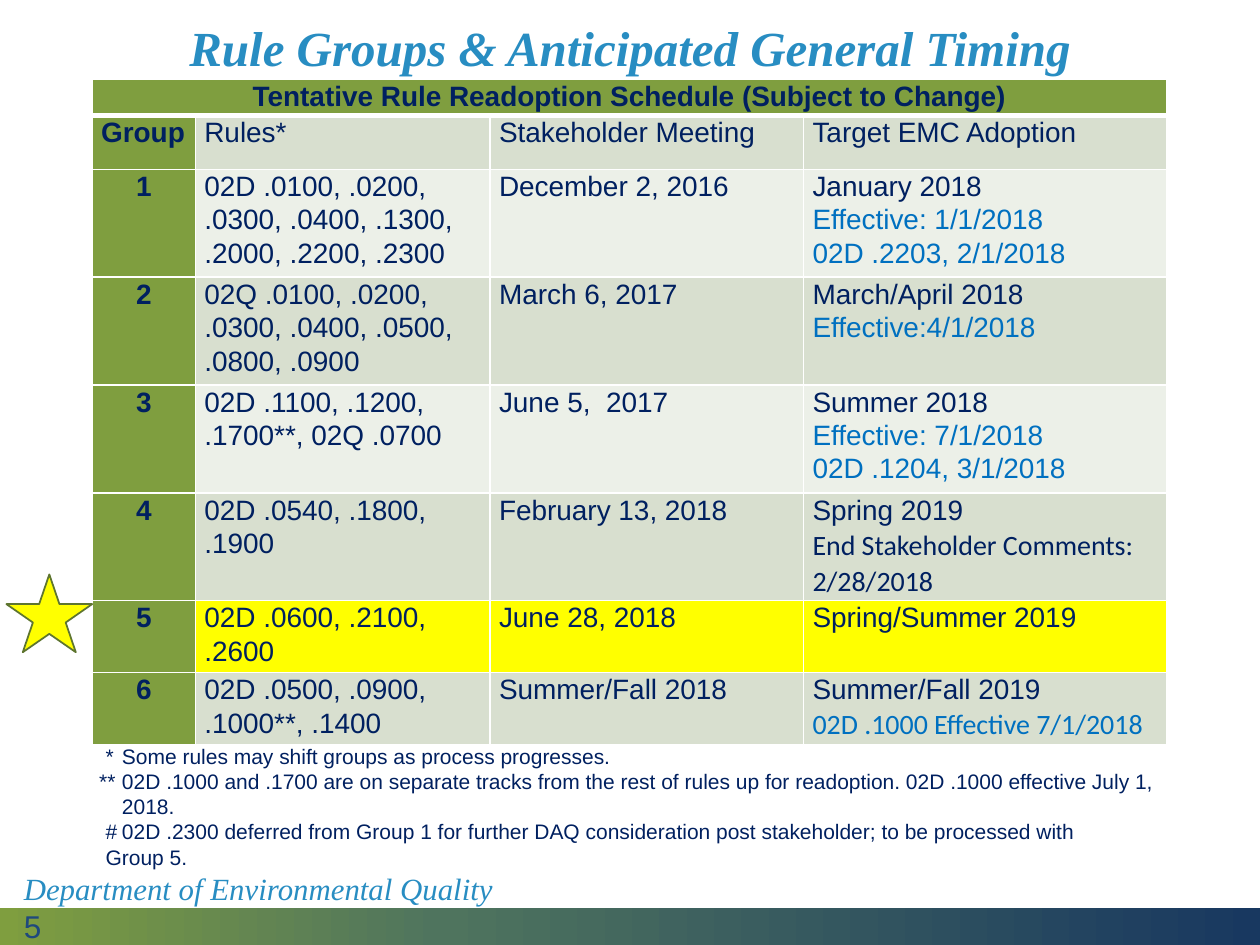
from lxml.etree import SubElement
from pptx import Presentation
from pptx.dml.color import RGBColor
from pptx.enum.shapes import MSO_SHAPE
from pptx.enum.text import MSO_ANCHOR, PP_ALIGN
from pptx.oxml.ns import qn
from pptx.util import Cm, Pt

NAVY, BLUE, TITLE_BLUE = "002060", "0070C0", "288DC2"
GREEN, SAGE, PALE, YELLOW = "7F9E3F", "D8DFCF", "ECF0E8", "FFFF00"
SERIF = "Times New Roman"

COLUMNS = [2.08, 5.94, 6.32, 7.32]
HEIGHTS = [0.72, 1.09, 2.16, 2.16, 2, 2.14, 1.45, 1.45]
HEADINGS = ["Group", "Rules*", "Stakeholder Meeting", "Target EMC Adoption"]
GROUPS = [
    (PALE, "02D .0100, .0200, .0300, .0400, .1300, .2000, .2200, .2300",
     "December 2, 2016",
     [("January 2018",), ("Effective: 1/1/2018", BLUE),
      ("02D .2203, 2/1/2018", BLUE)]),
    (SAGE, "02Q .0100, .0200, .0300, .0400, .0500, .0800, .0900",
     "March 6, 2017",
     [("March/April 2018",), ("Effective:4/1/2018", BLUE)]),
    (PALE, "02D .1100, .1200, .1700**, 02Q .0700", "June 5,  2017",
     [("Summer 2018",), ("Effective: 7/1/2018", BLUE),
      ("02D .1204, 3/1/2018", BLUE)]),
    (SAGE, "02D .0540, .1800, .1900", "February 13, 2018",
     [("Spring 2019",),
      ("End Stakeholder Comments: 2/28/2018", NAVY, "Calibri")]),
    (YELLOW, "02D .0600, .2100, .2600", "June 28, 2018",
     [("Spring/Summer 2019",)]),
    (SAGE, "02D .0500, .0900, .1000**, .1400", "Summer/Fall 2018",
     [("Summer/Fall 2019",),
      ("02D .1000 Effective 7/1/2018", BLUE, "Calibri")]),
]
NOTES = [
    (0.13, 0.46, "*\tSome rules may shift groups as process progresses."),
    (0, 0.46, "**\t02D .1000 and .1700 are on separate tracks from the rest of "
              "rules up for readoption. 02D .1000 effective July 1, 2018."),
    (0.13, 0.46, "#\t02D .2300 deferred from Group 1 for further DAQ "
                 "consideration post stakeholder; to be processed with"),
    (0.13, 0.13, "Group 5."),
]


def rgb(color):
    return RGBColor.from_string(color)


def format_runs(p, size, color, font="Arial", bold=False, italic=False):
    for r in p.runs:
        r.font.size, r.font.name = Pt(size), font
        r.font.bold, r.font.italic = bold, italic
        r.font.color.rgb = rgb(color)


def add_text(s, box, text, size, color, spacing=1, align=PP_ALIGN.LEFT, **style):
    tf = s.shapes.add_textbox(*map(Cm, box)).text_frame
    tf.word_wrap = True
    tf.vertical_anchor = MSO_ANCHOR.MIDDLE
    p = tf.paragraphs[0]
    p.text, p.alignment, p.line_spacing = text, align, spacing
    format_runs(p, size, color, **style)


def add_notes(s, box):
    tf = s.shapes.add_textbox(*map(Cm, box)).text_frame
    tf.word_wrap = True
    for i, (start, left, text) in enumerate(NOTES):
        p = tf.add_paragraph() if i else tf.paragraphs[0]
        p.text = text
        pPr = p._p.get_or_add_pPr()
        pPr.set("marL", str(Cm(left)))
        pPr.set("indent", str(Cm(start) - Cm(left)))
        format_runs(p, 12, NAVY)


def add_shape(s, kind, box):
    sp = s.shapes.add_shape(kind, *map(Cm, box))
    sp.shadow.inherit = False
    return sp


def add_footer_band(s, box):
    sp = add_shape(s, MSO_SHAPE.RECTANGLE, box)
    sp.line.fill.background()
    sp.fill.gradient()
    sp.fill.gradient_angle = 0
    stops = next(sp._element.iter(qn("a:gsLst")))
    for stop in list(stops):
        stops.remove(stop)
    for pos, color in [(0, GREEN), (35, "4F745E"), (100, "183860")]:
        stop = SubElement(stops, qn("a:gs"), pos=str(pos * 1000))
        SubElement(stop, qn("a:srgbClr"), val=color)


def add_star(s, box):
    sp = add_shape(s, MSO_SHAPE.STAR_5_POINT, box)
    sp.fill.solid()
    sp.fill.fore_color.rgb = rgb(YELLOW)
    sp.line.color.rgb = rgb("5E752F")
    sp.line.width = Pt(1)


def set_borders(cell, **widths):
    tcPr = cell._tc.get_or_add_tcPr()
    for side in "LRTB":
        ln = SubElement(tcPr, qn(f"a:ln{side}"), w=str(Pt(widths.get(side, 1))))
        fill = SubElement(ln, qn("a:solidFill"))
        SubElement(fill, qn("a:srgbClr"), val="FFFFFF")


def fill_cell(cell, lines, fill, bold=False, align=PP_ALIGN.LEFT):
    cell.margin_left = cell.margin_right = Cm(0.18)
    cell.margin_top = cell.margin_bottom = 0
    cell.fill.solid()
    cell.fill.fore_color.rgb = rgb(fill)
    tf = cell.text_frame
    for i, (text, *style) in enumerate(lines):
        p = tf.add_paragraph() if i else tf.paragraphs[0]
        p.text, p.alignment, p.line_spacing = text, align, 1.07
        color, font = (style + [NAVY, "Arial"][len(style):])
        format_runs(p, 16, color, font, bold)


def add_schedule(s, left, top):
    table = s.shapes.add_table(len(HEIGHTS), len(COLUMNS), Cm(left), Cm(top),
                               Cm(sum(COLUMNS)), Cm(sum(HEIGHTS))).table
    for column, width in zip(table.columns, COLUMNS):
        column.width = Cm(width)
    for row, height in zip(table.rows, HEIGHTS):
        row.height = Cm(height)
    for i, row in enumerate(table.rows):
        for cell in row.cells:
            set_borders(cell, **{0: {"B": 3}, 1: {"T": 3}}.get(i, {}))

    banner = table.cell(0, 0)
    banner.merge(table.cell(0, len(COLUMNS) - 1))
    fill_cell(banner, [("Tentative Rule Readoption Schedule (Subject to Change)",)],
              GREEN, True, PP_ALIGN.CENTER)
    for c, heading in enumerate(HEADINGS):
        fill_cell(table.cell(1, c), [(heading,)], SAGE if c else GREEN, c == 0)
    for n, (fill, rules, meeting, target) in enumerate(GROUPS, 1):
        fill_cell(table.cell(n + 1, 0), [(str(n),)], GREEN, True, PP_ALIGN.CENTER)
        for c, lines in enumerate([[(rules,)], [(meeting,)], target], 1):
            fill_cell(table.cell(n + 1, c), lines, fill)


def main():
    prs = Presentation()
    prs.slide_width, prs.slide_height = Cm(25.4), Cm(19.05)
    s = prs.slides.add_slide(prs.slide_layouts[6])
    add_footer_band(s, (0, 18.31, 25.4, 0.76))
    add_text(s, (1.75, -0.46, 21.9, 2.95), "Rule Groups & Anticipated General Timing",
             28, TITLE_BLUE, 0.9, PP_ALIGN.CENTER, font=SERIF, bold=True, italic=True)
    add_text(s, (0.23, 18.47, 5.72, 0.38), "5", 18, "1F497D")
    add_text(s, (0.23, 17.45, 10.41, 1.02), "Department of Environmental Quality",
             17.6, TITLE_BLUE, 0.9, font=SERIF, italic=True)
    add_schedule(s, 1.86, 1.6)
    add_notes(s, (1.75, 14.86, 21.79, 4.11))
    add_star(s, (0.13, 11.58, 1.73, 1.57))
    prs.save("out.pptx")


if __name__ == "__main__":
    main()
